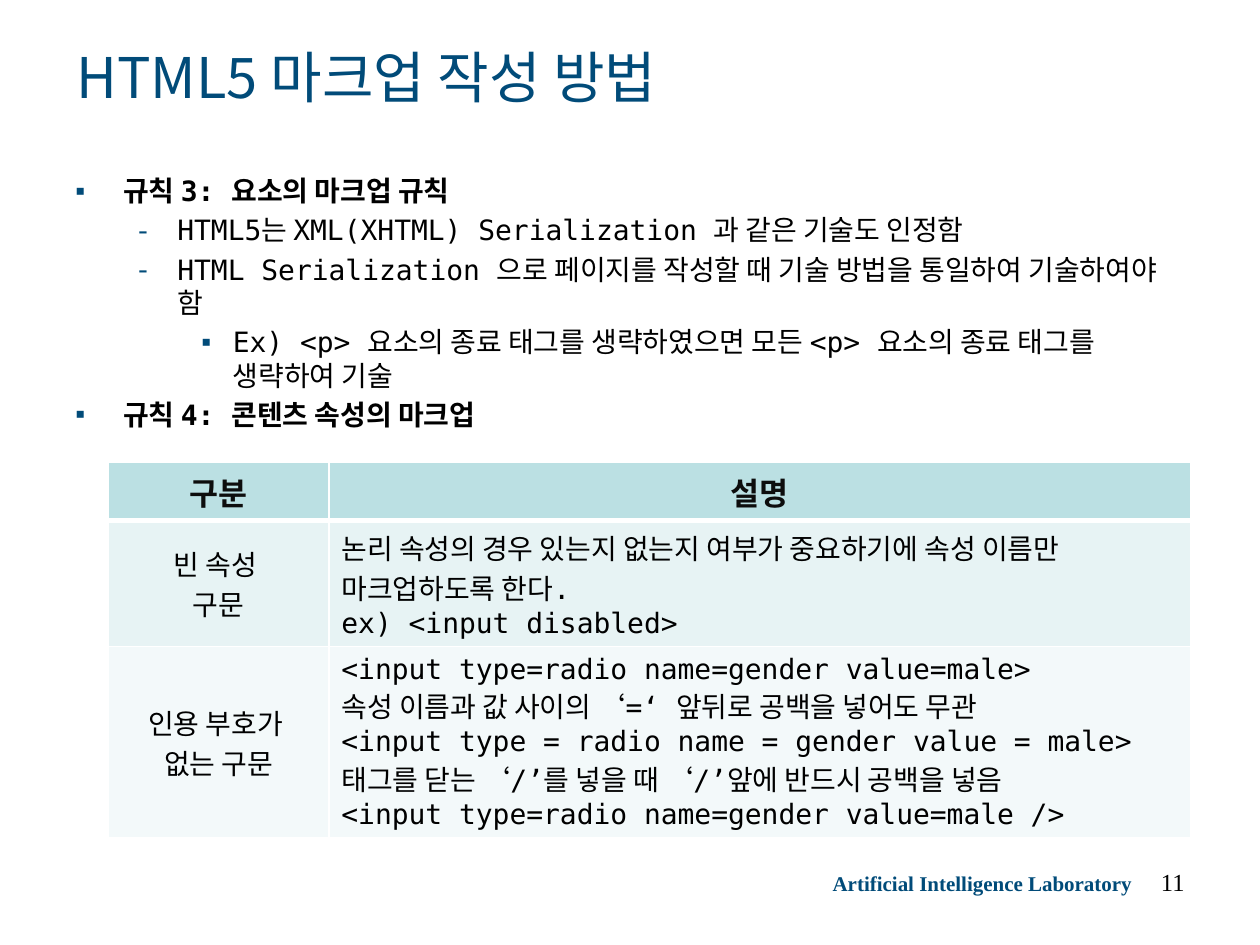
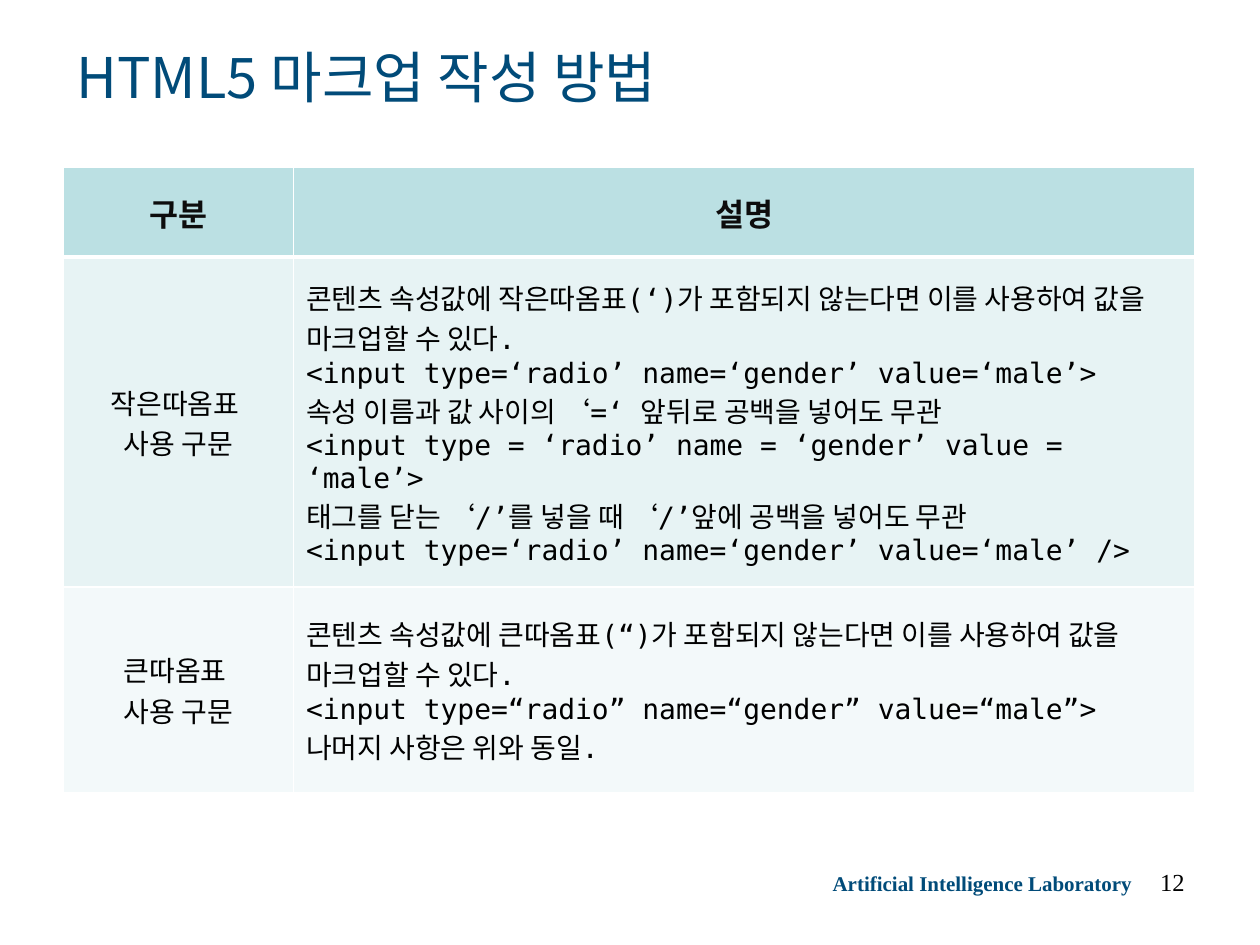
from lxml import etree
from pptx import Presentation
from pptx import util as u
from pptx.dml import color
from pptx.enum import text
from pptx.oxml import ns

NAVY, BLACK, HEADING_INK, WHITE = "014B79", "000000", "0D0D0D", "FFFFFF"
HEADER_FILL, ROW_FILLS = "BBE0E3", ("E7F3F4", "F3F9FA")
SANS, MONO, SERIF = "Noto Sans CJK KR", "DejaVu Sans Mono", "Times New Roman"
TITLE = "HTML5 마크업 작성 방법"
LABORATORY = "Artificial Intelligence Laboratory"
TABLE_HEADINGS = ("구분", "설명")
LEFT, CENTER, RIGHT = (text.PP_ALIGN.LEFT, text.PP_ALIGN.CENTER,
                       text.PP_ALIGN.RIGHT)
MIDDLE = text.MSO_ANCHOR.MIDDLE
# level: bullet character, text indent, hanging indent
BULLETS = {0: ("▪", 0.38, 0.38), 1: ("-", 0.81, 0.31), 2: ("▪", 1.25, 0.25)}

RULES = [
    (0, "규칙 3: 요소의 마크업 규칙"),
    (1, "HTML5는 XML(XHTML) Serialization 과 같은 기술도 인정함"),
    (1, "HTML Serialization 으로 페이지를 작성할 때 기술 방법을 통일하여 기술하여야 함"),
    (2, "Ex) <p> 요소의 종료 태그를 생략하였으면 모든 <p> 요소의 종료 태그를 생략하여 기술"),
    (0, "규칙 4: 콘텐츠 속성의 마크업"),
]
UNQUOTED_SYNTAX = [
    (["빈 속성 ", "구문"],
     ["논리 속성의 경우 있는지 없는지 여부가 중요하기에 속성 이름만 마크업하도록 한다.",
      "ex) <input disabled>"]),
    (["인용 부호가 ", "없는 구문"],
     ["<input type=radio name=gender value=male>",
      "속성 이름과 값 사이의 ‘=‘ 앞뒤로 공백을 넣어도 무관",
      "<input type = radio name = gender value = male>",
      "태그를 닫는 ‘/’를 넣을 때 ‘/’앞에 반드시 공백을 넣음",
      "<input type=radio name=gender value=male />"]),
]
QUOTED_SYNTAX = [
    (["작은따옴표 ", "사용 구문"],
     ["콘텐츠 속성값에 작은따옴표(‘)가 포함되지 않는다면 이를 사용하여 값을 마크업할 수 있다.",
      "<input type=‘radio’ name=‘gender’ value=‘male’>",
      "속성 이름과 값 사이의 ‘=‘ 앞뒤로 공백을 넣어도 무관",
      "<input type = ‘radio’ name = ‘gender’ value = ‘male’>",
      "태그를 닫는 ‘/’를 넣을 때 ‘/’앞에 공백을 넣어도 무관",
      "<input type=‘radio’ name=‘gender’ value=‘male’ />"]),
    (["큰따옴표 ", "사용 구문"],
     ["콘텐츠 속성값에 큰따옴표(“)가 포함되지 않는다면 이를 사용하여 값을 마크업할 수 있다.",
      "<input type=“radio” name=“gender” value=“male”>",
      "나머지 사항은 위와 동일."]),
]


def rgb(value):
    return color.RGBColor.from_string(value)


def add_child(parent, tag, **attributes):
    child = etree.SubElement(parent, ns.qn(tag))
    for name, value in attributes.items():
        child.set(name, str(value))
    return child


def write(paragraph, words, size=16, font=MONO, ink=BLACK, bold=False,
          align=LEFT):
    paragraph.alignment = align
    run = paragraph.add_run()
    run.text = words
    run.font.size = u.Pt(size)
    run.font.name = font
    run.font.bold = bold
    run.font.color.rgb = rgb(ink)
    run.font._element.set("kern", "0")
    add_child(run.font._element, "a:ea", typeface=SANS)


def paragraphs_for(frame, count):
    """Yield count paragraphs, starting with the one the frame already has."""
    yield frame.paragraphs[0]
    for _ in range(count - 1):
        yield frame.add_paragraph()


def add_frame(slide, box, wrap=True):
    frame = slide.shapes.add_textbox(*map(u.Inches, box)).text_frame
    frame.word_wrap = wrap
    return frame


def add_title(slide, box):
    frame = add_frame(slide, box)
    frame.vertical_anchor = MIDDLE
    write(frame.paragraphs[0], TITLE, size=32, font=SANS, ink=NAVY)


def add_footer(slide, number):
    laboratory = add_frame(slide, (6.51, 6.86, 2.59, 0.3), wrap=False)
    write(laboratory.paragraphs[0], LABORATORY, size=12, font=SERIF,
          ink=NAVY, bold=True)
    page = add_frame(slide, (7.17, 6.83, 2.33, 0.52))
    write(page.paragraphs[0], str(number), size=14, font=SERIF, align=RIGHT)


def set_bullet(paragraph, level):
    character, indent, hanging = BULLETS[level]
    paragraph.level = level
    properties = paragraph._p.get_or_add_pPr()
    properties.set("marL", str(u.Inches(indent)))
    properties.set("indent", str(-u.Inches(hanging)))
    add_child(add_child(properties, "a:buClr"), "a:srgbClr", val=NAVY)
    add_child(properties, "a:buFont", typeface=SERIF)
    add_child(properties, "a:buChar", char=character)


def add_rules(slide, box):
    frame = add_frame(slide, box)
    paragraphs = paragraphs_for(frame, len(RULES))
    for index, (paragraph, (level, words)) in enumerate(zip(paragraphs, RULES)):
        set_bullet(paragraph, level)
        if index:
            paragraph.space_before = u.Pt(3.2)
        write(paragraph, words, bold=level == 0)


def set_borders(cell, top, bottom):
    properties = cell._tc.get_or_add_tcPr()
    for side, width in (("L", 1), ("R", 1), ("T", top), ("B", bottom)):
        line = add_child(properties, f"a:ln{side}", w=u.Pt(width))
        add_child(add_child(line, "a:solidFill"), "a:srgbClr", val=WHITE)


def fill_cell(cell, lines, fill, top=1, bottom=1, **format):
    set_borders(cell, top, bottom)
    cell.fill.solid()
    cell.fill.fore_color.rgb = rgb(fill)
    cell.vertical_anchor = MIDDLE
    for paragraph, words in zip(paragraphs_for(cell.text_frame, len(lines)), lines):
        write(paragraph, words, **format)


def add_syntax_table(slide, left, top, widths, heights, entries):
    box = (left, top, sum(widths), sum(heights))
    table = slide.shapes.add_table(len(heights), len(widths),
                                   *map(u.Inches, box)).table
    for column, width in zip(table.columns, widths):
        column.width = u.Inches(width)
    for row, height in zip(table.rows, heights):
        row.height = u.Inches(height)
    for index, heading in enumerate(TABLE_HEADINGS):
        fill_cell(table.cell(0, index), [heading], HEADER_FILL, bottom=3,
                  size=18, ink=HEADING_INK, bold=True, align=CENTER)
    for row, (entry, fill) in enumerate(zip(entries, ROW_FILLS), 1):
        border = 3 if row == 1 else 1
        for column, align in enumerate((CENTER, LEFT)):
            fill_cell(table.cell(row, column), entry[column], fill,
                      top=border, align=align)


def add_page(presentation, number):
    slide = presentation.slides.add_slide(presentation.slide_layouts[6])
    add_footer(slide, number)
    add_title(slide, (0.51, 0.26, 8.98, 0.69))
    return slide


def main():
    presentation = Presentation()
    presentation.slide_width = u.Inches(10)
    presentation.slide_height = u.Inches(7.5)

    slide = add_page(presentation, 11)
    add_rules(slide, (0.5, 1.33, 9, 5.55))
    add_syntax_table(slide, 0.86, 3.67, (1.75, 6.84), (0.46, 1, 1.52),
                     UNQUOTED_SYNTAX)

    slide = add_page(presentation, 12)
    add_syntax_table(slide, 0.5, 1.33, (1.83, 7.15), (0.71, 2.62, 1.63),
                     QUOTED_SYNTAX)

    presentation.save("out.pptx")


if __name__ == "__main__":
    main()
